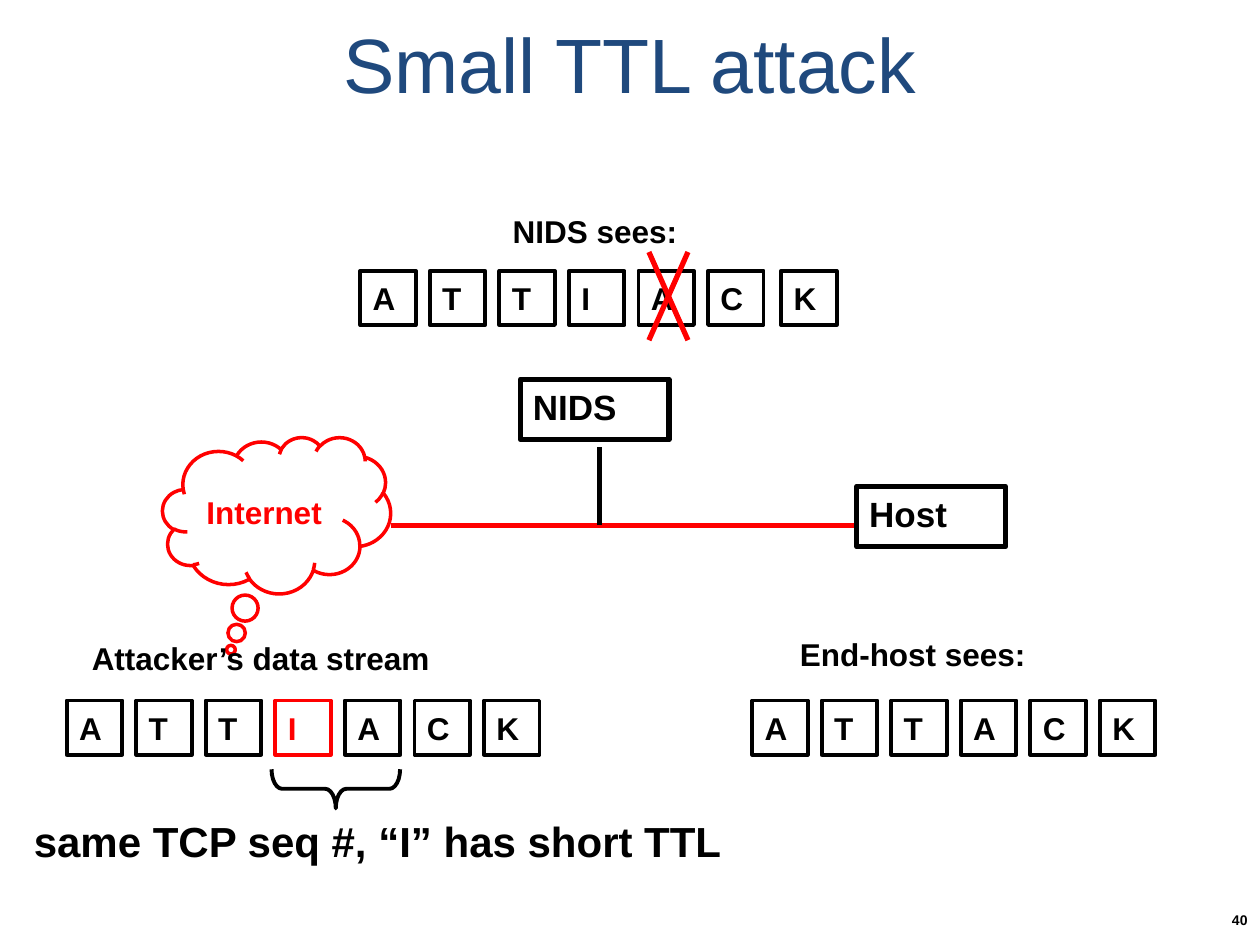
from lxml.etree import SubElement
from pptx import Presentation
from pptx.dml.color import RGBColor
from pptx.enum.shapes import MSO_CONNECTOR, MSO_SHAPE as Shape
from pptx.enum.text import MSO_ANCHOR as Anchor, MSO_AUTO_SIZE as AutoSize, PP_ALIGN as Align
from pptx.oxml.ns import qn
from pptx.util import Inches, Pt

BLACK = RGBColor(0x00, 0x00, 0x00)
RED = RGBColor(0xFF, 0x00, 0x00)
NAVY = RGBColor(0x1F, 0x49, 0x7D)


class SlideBuilder:
    """Draws styled elements on one slide, measured on a grid of 100 columns and 75 rows."""

    font_name = "Arial"
    columns, rows = 100, 75
    cell_width, cell_height, cell_step = 4.4, 4.3, 5.52

    def __init__(self, deck):
        self.column = deck.slide_width / self.columns
        self.row = deck.slide_height / self.rows
        self.slide = deck.slides.add_slide(deck.slide_layouts[5])

    def place(self, left, top, width, height):
        return (round(left * self.column), round(top * self.row),
                round(width * self.column), round(height * self.row))

    def set_text(self, shape, text, size, color=BLACK, bold=True, align=Align.LEFT,
                 anchor=Anchor.TOP, wrap=False, grow=False):
        frame = shape.text_frame
        frame.text = text
        frame.word_wrap = wrap
        frame.vertical_anchor = anchor
        frame.auto_size = AutoSize.SHAPE_TO_FIT_TEXT if grow else AutoSize.NONE
        for para in frame.paragraphs:
            para.alignment = align
            for span in para.runs:
                span.font.name = self.font_name
                span.font.size = Pt(size)
                span.font.bold = bold
                span.font.color.rgb = color

    def title(self, text, *area):
        title = self.slide.shapes.title
        title.left, title.top, title.width, title.height = self.place(*area)
        self.set_text(title, text, 44, NAVY, False, Align.CENTER, Anchor.MIDDLE, wrap=True)

    def label(self, text, *area, size=18):
        box = self.slide.shapes.add_textbox(*self.place(*area))
        self.set_text(box, text, size, grow=True)

    def page_number(self, text, *area):
        box = self.slide.shapes.add_textbox(*self.place(*area))
        self.set_text(box, text, 8, align=Align.RIGHT, anchor=Anchor.MIDDLE, wrap=True)

    def outline(self, kind, *area, color=BLACK, weight=2.25):
        shape = self.slide.shapes.add_shape(kind, *self.place(*area))
        shape.shadow.inherit = False
        shape.fill.background()
        shape.line.color.rgb = color
        shape.line.width = Pt(weight)
        return shape

    def node(self, text, left, top):
        box = self.outline(Shape.RECTANGLE, left, top, 11.8, 4.8, weight=3)
        self.set_text(box, text, 20, wrap=True, grow=True)

    def cloud(self, text, *area):
        cloud = self.outline(Shape.CLOUD_CALLOUT, *area, color=RED, weight=2)
        cloud.adjustments[0], cloud.adjustments[1] = -0.2, 0.86
        self.set_text(cloud, text, 18, RED, anchor=Anchor.MIDDLE)

    def brace(self, *area):
        brace = self.outline(Shape.LEFT_BRACE, *area)
        brace.adjustments[0] = 0.27
        brace.rotation = 270

    def packets(self, letters, left, top, marked=""):
        for index, letter in enumerate(letters):
            color = RED if letter in marked else BLACK
            cell = self.outline(Shape.RECTANGLE, left + index * self.cell_step, top,
                                self.cell_width, self.cell_height, color=color)
            self.set_text(cell, letter, 18, color, anchor=Anchor.MIDDLE)

    def line(self, *ends, color=RED):
        line = self.slide.shapes.add_connector(MSO_CONNECTOR.STRAIGHT, *self.place(*ends))
        line.line.color.rgb = color
        line.line.width = Pt(3)
        SubElement(line.element.spPr, qn("a:effectLst"))

    def cross(self, left, top, right, bottom):
        self.line(left, top, right, bottom)
        self.line(right, top, left, bottom)


def main():
    deck = Presentation()
    deck.slide_width, deck.slide_height = Inches(10), Inches(7.5)
    page = SlideBuilder(deck)

    page.title("Small TTL attack", 5, 0, 90, 10)
    page.page_number("40", 93.1, 71, 6.9, 4)
    page.label("same TCP seq #, “I” has short TTL", 1.7, 64.2, 56.6, 5, size=24)

    page.cloud("Internet", 12.9, 34.7, 18.1, 12.4)
    page.line(31, 41.7, 68, 41.7)
    page.node("NIDS", 41.3, 30.1)
    page.line(47.6, 41.7, 47.6, 35.5, color=BLACK)
    page.node("Host", 68, 38.6)

    page.label("End-host sees:", 62.5, 49.9, 19.9, 4)
    page.label("Attacker’s data stream", 6.3, 50.2, 28.8, 4)
    page.packets("ATTIACK", 5.3, 55.6, marked="I")
    page.packets("ATTACK", 59.7, 55.6)
    page.brace(25.1, 57.5, 3.1, 10.2)

    page.label("NIDS sees:", 39.7, 16.3, 15.1, 4)
    page.packets("ATTIAC", 28.6, 21.5)
    page.packets("K", 62, 21.5)
    page.cross(51.5, 20, 54.6, 27)

    deck.save("out.pptx")


if __name__ == "__main__":
    main()
